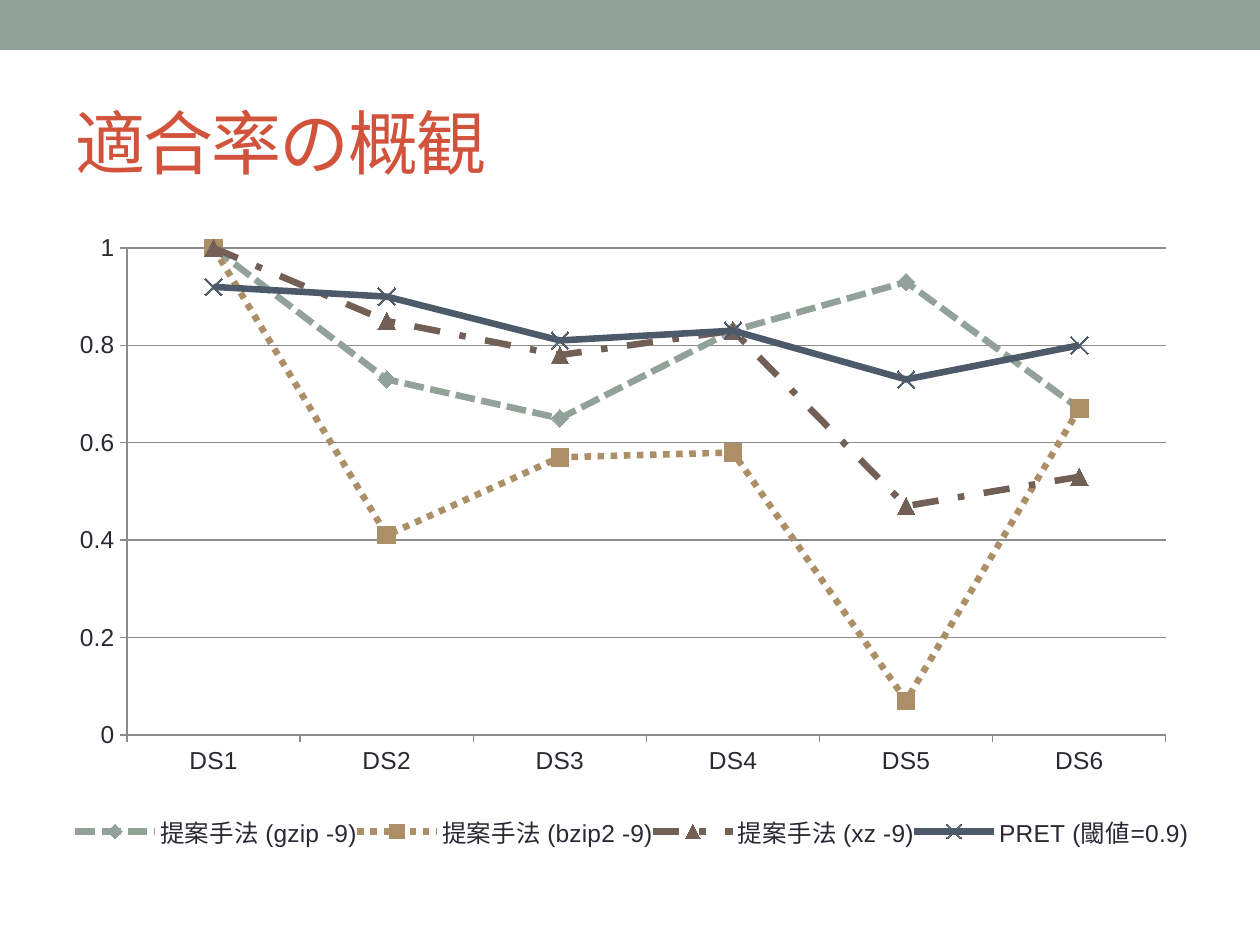
from lxml.etree import SubElement
from pptx import Presentation
from pptx.chart.data import CategoryChartData
from pptx.dml.color import RGBColor
from pptx.enum.chart import XL_CHART_TYPE, XL_LEGEND_POSITION, XL_MARKER_STYLE, XL_TICK_MARK
from pptx.enum.dml import MSO_LINE
from pptx.enum.shapes import MSO_SHAPE
from pptx.enum.text import MSO_ANCHOR
from pptx.oxml.ns import qn
from pptx.util import Emu, Pt

PX = 914400 / 126
FONT = "Arial"
SAGE = RGBColor(0x93, 0xA2, 0x99)
SAND = RGBColor(0xAD, 0x8F, 0x67)
BROWN = RGBColor(0x72, 0x60, 0x56)
SLATE = RGBColor(0x4C, 0x5A, 0x6A)
RED = RGBColor(0xD2, 0x53, 0x3C)
INK = RGBColor(0x29, 0x29, 0x34)
GREY = RGBColor(0x8C, 0x8C, 0x8C)

CATEGORIES = ["DS1", "DS2", "DS3", "DS4", "DS5", "DS6"]
SERIES = [
    ("提案手法 (gzip -9)", (1, 0.73, 0.65, 0.83, 0.93, 0.67),
     SAGE, MSO_LINE.SQUARE_DOT, XL_MARKER_STYLE.DIAMOND),
    ("提案手法 (bzip2 -9)", (1, 0.41, 0.57, 0.58, 0.07, 0.67),
     SAND, MSO_LINE.ROUND_DOT, XL_MARKER_STYLE.SQUARE),
    ("提案手法 (xz -9)", (1, 0.85, 0.78, 0.83, 0.47, 0.53),
     BROWN, MSO_LINE.DASH_DOT, XL_MARKER_STYLE.TRIANGLE),
    ("PRET (閾値=0.9)", (0.92, 0.9, 0.81, 0.83, 0.73, 0.8),
     SLATE, MSO_LINE.SOLID, XL_MARKER_STYLE.X),
]
PLOT_BOX = (64, 27, 1039, 487)
LEGEND_BOX = (12, 567, 1114, 87)


def px(length):
    """Convert a length in px to EMU."""
    return Emu(round(length * PX))


def add_band(slide, left, top, width, height):
    """Draw the plain band along the top edge."""
    shape = slide.shapes.add_shape(
        MSO_SHAPE.RECTANGLE, px(left), px(top), px(width), px(height))
    shape.shadow.inherit = False
    shape.fill.solid()
    shape.fill.fore_color.rgb = SAGE
    shape.line.fill.background()


def add_title(slide, text, left, top, width, height):
    """Write the slide title, centred vertically in its box."""
    shape = slide.shapes.add_textbox(px(left), px(top), px(width), px(height))
    text_frame = shape.text_frame
    text_frame.word_wrap = True
    text_frame.vertical_anchor = MSO_ANCHOR.MIDDLE
    text_frame.text = text
    run = text_frame.paragraphs[0].runs[0]
    run.font.size = Pt(40)
    run.font.name = FONT
    run.font.color.rgb = RED
    run.font._element.set("spc", "-100")


def set_font(font, size):
    """Apply the chart typeface, ink colour and a point size."""
    font.name = FONT
    font.size = Pt(size)
    font.color.rgb = INK


def set_line(line, color, width):
    """Give a line its colour and point width."""
    line.color.rgb = color
    line.width = Pt(width)


def set_layout(parent, index, settings, box, width, height):
    """Fix a chart part to a px box inside a chart of the given size."""
    for old_layout in parent.findall(qn("c:layout")):
        parent.remove(old_layout)
    layout = SubElement(parent, qn("c:layout"))
    parent.insert(index, layout)
    manual = SubElement(layout, qn("c:manualLayout"))
    fractions = [length / size for length, size in zip(box, (width, height) * 2)]
    settings = {**settings, "xMode": "edge", "yMode": "edge", **dict(zip("xywh", fractions))}
    for name, value in settings.items():
        SubElement(manual, qn(f"c:{name}")).set("val", str(value))


def format_axes(chart):
    """Style both axes and the horizontal gridlines."""
    for axis in (chart.category_axis, chart.value_axis):
        axis.major_tick_mark = XL_TICK_MARK.OUTSIDE
        axis.minor_tick_mark = XL_TICK_MARK.NONE
        set_font(axis.tick_labels.font, 14)
        set_line(axis.format.line, GREY, 0.75)
    axis = chart.value_axis
    axis.minimum_scale = 0
    axis.maximum_scale = 1
    axis.major_unit = 0.2
    axis.tick_labels.number_format = "General"
    axis.tick_labels.number_format_is_linked = False
    axis.has_major_gridlines = True
    set_line(axis.major_gridlines.format.line, GREY, 0.75)


def format_series(series, color, dash, marker_style):
    """Style one line and its markers."""
    series.smooth = False
    set_line(series.format.line, color, 3.75)
    series.format.line.dash_style = dash
    marker = series.marker
    marker.style = marker_style
    marker.size = 10
    if marker_style == XL_MARKER_STYLE.X:
        marker.format.fill.background()
        set_line(marker.format.line, color, 0.75)
    else:
        marker.format.fill.solid()
        marker.format.fill.fore_color.rgb = color
        marker.format.line.fill.background()


def add_precision_chart(slide, left, top, width, height):
    """Place the line chart of precision per data set."""
    data = CategoryChartData()
    data.categories = CATEGORIES
    for name, values, *_ in SERIES:
        data.add_series(name, values)
    chart = slide.shapes.add_chart(
        XL_CHART_TYPE.LINE_MARKERS, px(left), px(top), px(width), px(height), data).chart
    chart.has_title = False
    set_font(chart.font, 10)
    chart.has_legend = True
    chart.legend.position = XL_LEGEND_POSITION.BOTTOM
    chart.legend.include_in_layout = False
    set_font(chart.legend.font, 14)
    chart.plots[0].vary_by_categories = False
    plot_area = chart.element.find(".//" + qn("c:plotArea"))
    set_layout(plot_area, 0, {"layoutTarget": "inner"}, PLOT_BOX, width, height)
    legend = chart.element.find(".//" + qn("c:legend"))
    set_layout(legend, 1, {}, LEGEND_BOX, width, height)
    format_axes(chart)
    for series, (_, _, color, dash, marker_style) in zip(chart.plots[0].series, SERIES):
        format_series(series, color, dash, marker_style)


def main():
    """Build the slide and save it."""
    presentation = Presentation()
    presentation.slide_width = px(1260)
    presentation.slide_height = px(945)
    slide = presentation.slides.add_slide(presentation.slide_layouts[6])
    add_band(slide, 0, 0, 1260, 50)
    add_title(slide, "適合率の概観", 63, 73, 1134, 136)
    add_precision_chart(slide, 63, 221, 1134, 672)
    presentation.save("out.pptx")


if __name__ == "__main__":
    main()
